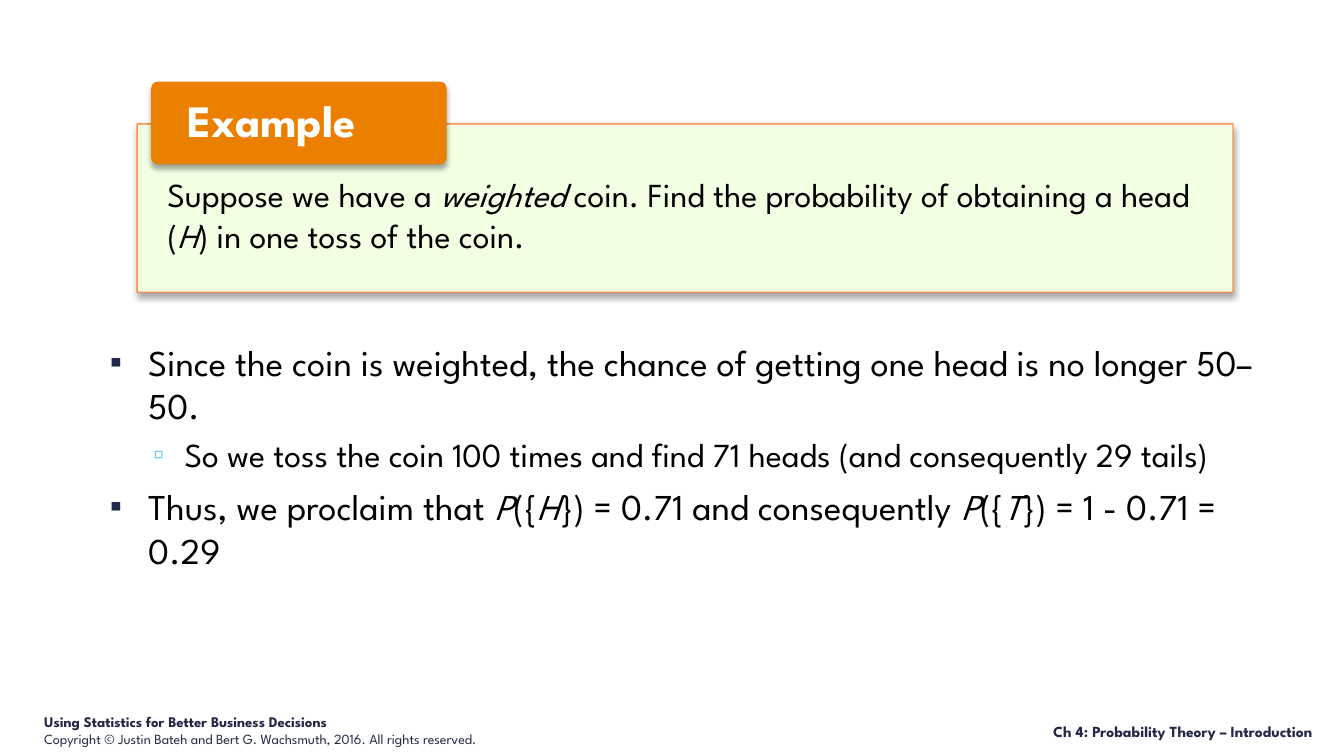
from lxml.etree import SubElement
from pptx import Presentation
from pptx.dml.color import RGBColor
from pptx.enum.shapes import MSO_SHAPE
from pptx.enum.text import MSO_ANCHOR, MSO_AUTO_SIZE, PP_ALIGN
from pptx.oxml.ns import qn
from pptx.util import Emu, Pt

FONT = "League Spartan"
NAVY = RGBColor(0x21, 0x27, 0x45)
SKY = RGBColor(0x5E, 0xCC, 0xF3)
BLACK = RGBColor(0, 0, 0)
WHITE = RGBColor(0xFF, 0xFF, 0xFF)
PALE_GREEN = RGBColor(0xF2, 0xFF, 0xE3)
ORANGE = RGBColor(0xEB, 0x80, 0x00)
LIGHT_ORANGE = RGBColor(0xFF, 0x86, 0x43)

EXAMPLE = "Suppose we have a *weighted *coin. Find the probability of obtaining a head (*H*) in one toss of the coin."
REASONING = [
    (0, "Since the coin is weighted, the chance of getting one head is no longer 50–50."),
    (1, "So we toss the coin 100 times and find 71 heads (and consequently 29 tails)"),
    (0, "Thus, we proclaim that *P*({*H*}) = 0.71 and consequently *P*({*T*}) = 1 - 0.71 = 0.29"),
]
BULLET_LEVELS = [
    {"size": 26, "before": 7, "margin": 45, "hang": 38, "mark": "▪", "color": NAVY, "scale": 95},
    {"size": 24, "before": 5, "margin": 81, "hang": 31, "mark": "▫", "color": SKY, "scale": 90},
]
COPYRIGHT = "Copyright\u00a0©\u00a0Justin Bateh and Bert G. Wachsmuth, 2016.\u00a0All\u00a0rights\u00a0reserved."


def px(length):
    return Emu(length * 9144)


def place(shape, box):
    shape.left, shape.top, shape.width, shape.height = map(px, box)


def set_margins(text_frame, left, top, right, bottom):
    text_frame.margin_left, text_frame.margin_top = px(left), px(top)
    text_frame.margin_right, text_frame.margin_bottom = px(right), px(bottom)


def write(paragraph, text, size, color, bold=False):
    for index, part in enumerate(text.split("*")):
        run = paragraph.add_run()
        run.text = part
        run.font.name = FONT
        run.font.size = Pt(size)
        run.font.bold = bold
        run.font.italic = index % 2 == 1
        run.font.color.rgb = color


def add_shadow(shape):
    shape.shadow.inherit = False
    effects = shape._element.spPr.find(qn("a:effectLst"))
    shadow = SubElement(effects, qn("a:outerShdw"), blurRad=str(Pt(4)), dist=str(Pt(3)),
                        dir="5400000", algn="ctr", rotWithShape="0")
    color = SubElement(shadow, qn("a:srgbClr"), val=str(BLACK))
    SubElement(color, qn("a:alpha"), val="35000")


def add_panel(slide, kind, box, fill):
    panel = slide.shapes.add_shape(kind, *map(px, box))
    panel.fill.solid()
    panel.fill.fore_color.rgb = fill
    add_shadow(panel)
    panel.text_frame.word_wrap = True
    panel.text_frame.paragraphs[0].alignment = PP_ALIGN.LEFT
    return panel


def add_example(slide, box):
    left, top, width, height = box
    panel = add_panel(slide, MSO_SHAPE.RECTANGLE, box, PALE_GREEN)
    panel.line.color.rgb = LIGHT_ORANGE
    panel.line.width = Pt(1)
    line_color = panel.line._ln.find(".//" + qn("a:srgbClr"))
    SubElement(line_color, qn("a:alpha"), val="90000")
    panel.text_frame.vertical_anchor = MSO_ANCHOR.TOP
    set_margins(panel.text_frame, 30, 50, 10, 0)
    paragraph = panel.text_frame.paragraphs[0]
    paragraph.space_before = paragraph.space_after = Pt(6)
    write(paragraph, EXAMPLE, 24, BLACK)

    tab = add_panel(slide, MSO_SHAPE.ROUNDED_RECTANGLE, (left + 14, top - 42, 293, 82), ORANGE)
    tab.adjustments[0] = 0.08
    tab.line.fill.background()
    tab.text_frame.vertical_anchor = MSO_ANCHOR.MIDDLE
    set_margins(tab.text_frame, 34, 4, 34, 4)
    heading = tab.text_frame.paragraphs[0]
    heading.line_spacing = 0.9
    write(heading, "Example", 32, WHITE, bold=True)


def set_bullet(paragraph, level):
    properties = paragraph._p.get_or_add_pPr()
    properties.set("marL", str(px(level["margin"])))
    properties.set("indent", str(-px(level["hang"])))
    color = SubElement(properties, qn("a:buClr"))
    SubElement(color, qn("a:srgbClr"), val=str(level["color"]))
    SubElement(properties, qn("a:buSzPct"), val=str(level["scale"] * 1000))
    SubElement(properties, qn("a:buFont"), typeface="Arial")
    SubElement(properties, qn("a:buChar"), char=level["mark"])


def add_reasoning(slide, box):
    body = slide.placeholders[1]
    place(body, box)
    text_frame = body.text_frame
    text_frame.auto_size = MSO_AUTO_SIZE.NONE
    text_frame.vertical_anchor = MSO_ANCHOR.TOP
    for index, (depth, text) in enumerate(REASONING):
        paragraph = text_frame.add_paragraph() if index else text_frame.paragraphs[0]
        level = BULLET_LEVELS[depth]
        paragraph.level = depth
        paragraph.space_before = Pt(level["before"])
        set_bullet(paragraph, level)
        write(paragraph, text, level["size"], BLACK)


def add_credit(slide, box):
    text_frame = slide.shapes.add_textbox(*map(px, box)).text_frame
    text_frame.word_wrap = True
    write(text_frame.paragraphs[0], "Using Statistics for Better Business Decisions", 10.5, NAVY, bold=True)
    notice = text_frame.add_paragraph()
    notice.space_after = Pt(1)
    write(notice, COPYRIGHT, 10, NAVY)


def add_chapter(slide, box):
    text_frame = slide.shapes.add_textbox(*map(px, box)).text_frame
    text_frame.word_wrap = True
    text_frame.vertical_anchor = MSO_ANCHOR.BOTTOM
    paragraph = text_frame.paragraphs[0]
    paragraph.alignment = PP_ALIGN.RIGHT
    write(paragraph, "Ch 4: Probability Theory – Introduction", 11, NAVY, bold=True)


def main():
    presentation = Presentation()
    presentation.slide_width, presentation.slide_height = px(1333), px(750)
    slide = presentation.slides.add_slide(presentation.slide_layouts[1])
    title = slide.shapes.title._element
    title.getparent().remove(title)
    add_credit(slide, (34, 702, 528, 40))
    add_example(slide, (136, 123, 1087, 167))
    add_reasoning(slide, (92, 332, 1175, 338))
    add_chapter(slide, (650, 711, 662, 29))
    presentation.save("out.pptx")


if __name__ == "__main__":
    main()
